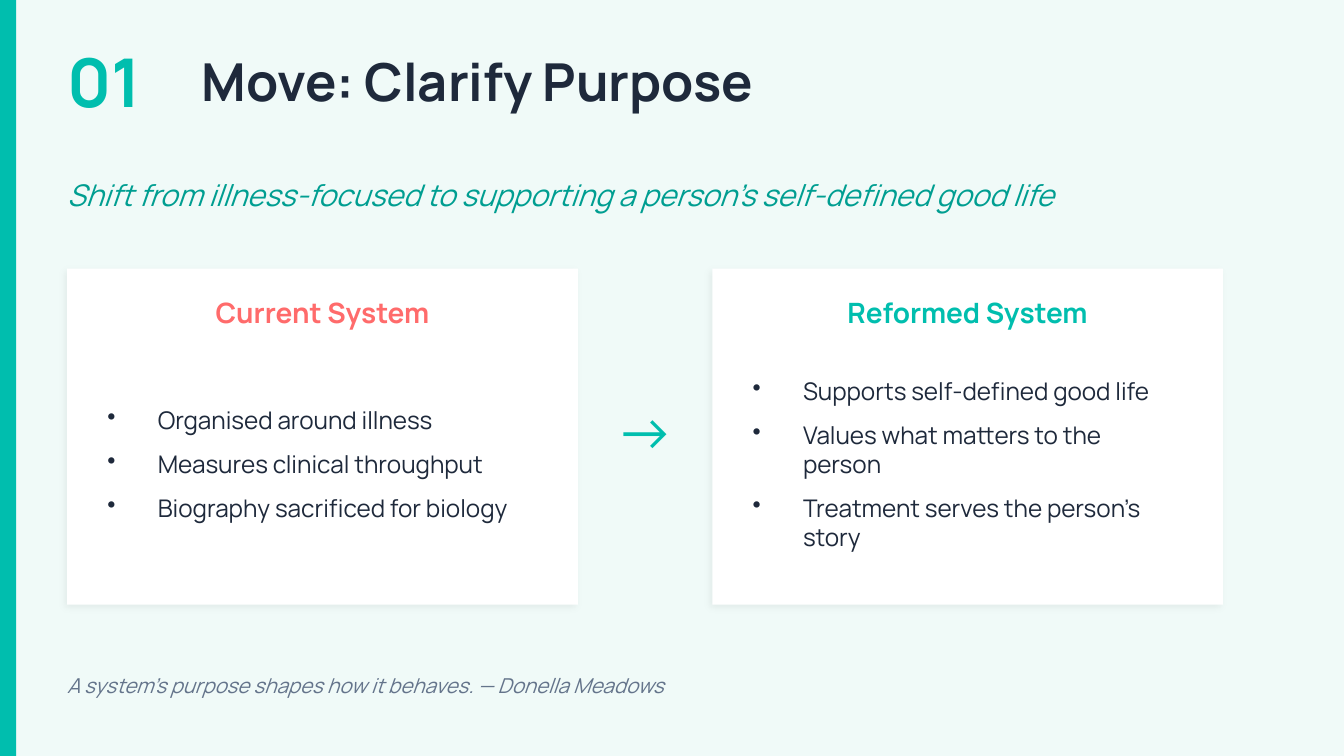
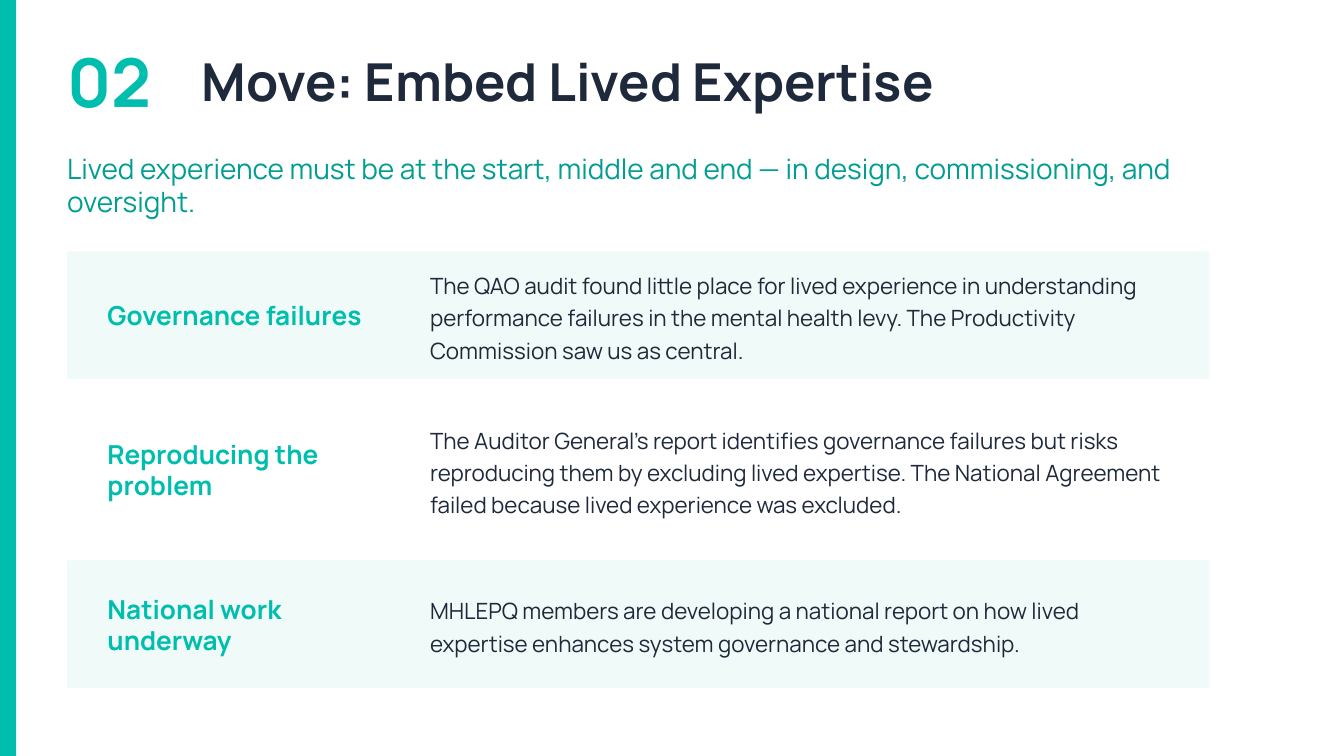
from lxml import etree
from pptx import Presentation
from pptx import util as u
from pptx.dml.color import RGBColor
from pptx.enum import shapes, text
from pptx.oxml import ns

COLORS = {
    "teal": "00BEAE", "deep_teal": "009E91", "coral": "FF6B6B",
    "ink": "1E293B", "slate": "64748B", "mint": "F0FAF8", "white": "FFFFFF",
}
FONT = "Manrope"
WIDTH = 10
HEIGHT = WIDTH * 9 / 16
LEFT = 0.5


def rgb(name):
    return RGBColor.from_string(COLORS[name])


def add_child(parent, tag, **attributes):
    return etree.SubElement(parent, ns.qn(tag), attributes)


def write_text(frame, content, size=12, color="ink", bold=False, italic=False,
               align=text.PP_ALIGN.LEFT, spacing=None, bullets=False):
    """Fill a frame with one paragraph, or with a list of them."""
    lines = [content] if isinstance(content, str) else content
    for i, line in enumerate(lines):
        paragraph = frame.paragraphs[0] if i == 0 else frame.add_paragraph()
        paragraph.alignment = align
        if spacing:
            paragraph.line_spacing = spacing
        if bullets:
            paragraph.space_after = u.Pt(8)
            properties = paragraph._p.get_or_add_pPr()
            indent = u.Pt(27)
            properties.set("marL", str(indent))
            properties.set("indent", str(-indent))
            add_child(properties, "a:buSzPct", val="100000")
            add_child(properties, "a:buChar", char="•")
        run = paragraph.add_run()
        run.text = line
        for font in (paragraph.font, run.font):
            font.name, font.size = FONT, u.Pt(size)
            font.bold, font.italic = bold, italic
            font.color.rgb = rgb(color)


class Deck:
    def __init__(self):
        self.presentation = Presentation()
        self.presentation.slide_width = u.Inches(WIDTH)
        self.presentation.slide_height = u.Inches(HEIGHT)
        self.slide = None

    def new_slide(self, number, title, background, title_width):
        self.slide = self.presentation.slides.add_slide(
            self.presentation.slide_layouts[6])
        fill = self.slide.background.fill
        fill.solid()
        fill.fore_color.rgb = rgb(background)
        self.panel(0, 0, 0.12, HEIGHT, "teal")
        self.label(LEFT, 0.3, 1, 0.6, number, size=36, color="teal", bold=True)
        self.label(1.5, 0.35, title_width, 0.5, title, size=28, bold=True)

    def label(self, left, top, width, height, content, **style):
        box = self.slide.shapes.add_textbox(*map(u.Inches, (left, top, width, height)))
        frame = box.text_frame
        frame.word_wrap = True
        frame.vertical_anchor = text.MSO_ANCHOR.MIDDLE
        frame.margin_left = frame.margin_right = 0
        frame.margin_top = frame.margin_bottom = 0
        write_text(frame, content, **style)

    def panel(self, left, top, width, height, color, shadow=False):
        panel = self.slide.shapes.add_shape(
            shapes.MSO_SHAPE.RECTANGLE, *map(u.Inches, (left, top, width, height)))
        panel.fill.solid()
        panel.fill.fore_color.rgb = rgb(color)
        panel.line.fill.background()
        panel.shadow.inherit = False
        if shadow:
            effects = panel._element.spPr.find(ns.qn("a:effectLst"))
            outer = add_child(effects, "a:outerShdw", blurRad=str(u.Pt(4)),
                              dist=str(u.Pt(2)), dir=str(135 * 60000),
                              algn="bl", rotWithShape="0")
            tint = add_child(outer, "a:srgbClr", val="000000")
            add_child(tint, "a:alpha", val="6000")

    def card(self, left, heading, color, points):
        top, width = 2, 3.8
        self.panel(left, top, width, 2.5, "white", shadow=True)
        self.label(left, top + 0.1, width, 0.45, heading, size=15, color=color,
                   bold=True, align=text.PP_ALIGN.CENTER)
        self.label(left + 0.3, top + 0.65, width - 0.6, 1.6, points,
                   size=13, bullets=True)

    def finding(self, top, heading, detail, color):
        self.panel(LEFT, top, 8.5, 0.95, color)
        self.label(0.8, top + 0.1, 2.2, 0.75, heading, size=14, color="teal", bold=True)
        self.label(3.2, top + 0.1, 5.5, 0.75, detail, spacing=1.2)


def clarify_purpose(deck):
    deck.new_slide("01", "Move: Clarify Purpose", "mint", title_width=5)
    deck.label(LEFT, 1.2, 9, 0.5,
               "Shift from illness-focused to supporting a person's self-defined good life",
               size=16, color="deep_teal", italic=True)
    # Current and reformed system, with the arrow between
    deck.card(LEFT, "Current System", "coral", [
        "Organised around illness",
        "Measures clinical throughput",
        "Biography sacrificed for biology",
    ])
    deck.label(4.4, 2.8, 0.8, 0.8, "→", size=32, color="teal",
               align=text.PP_ALIGN.CENTER)
    deck.card(5.3, "Reformed System", "teal", [
        "Supports self-defined good life",
        "Values what matters to the person",
        "Treatment serves the person's story",
    ])
    # Closing quote
    deck.label(LEFT, 4.9, 9, 0.4,
               "A system's purpose shapes how it behaves. — Donella Meadows",
               size=11, color="slate", italic=True)


def embed_expertise(deck):
    deck.new_slide("02", "Move: Embed Lived Expertise", "white", title_width=6)
    deck.label(LEFT, 1.15, 9, 0.45,
               "Lived experience must be at the start, middle and end — in design, "
               "commissioning, and oversight.", size=15, color="deep_teal")
    # Findings on alternating bands
    findings = [
        ("Governance failures",
         "The QAO audit found little place for lived experience in understanding "
         "performance failures in the mental health levy. The Productivity "
         "Commission saw us as central."),
        ("Reproducing the problem",
         "The Auditor General's report identifies governance failures but risks "
         "reproducing them by excluding lived expertise. The National Agreement "
         "failed because lived experience was excluded."),
        ("National work underway",
         "MHLEPQ members are developing a national report on how lived expertise "
         "enhances system governance and stewardship."),
    ]
    for i, (heading, detail) in enumerate(findings):
        deck.finding(1.87 + i * 1.15, heading, detail, ("mint", "white")[i % 2])


def main():
    deck = Deck()
    clarify_purpose(deck)
    embed_expertise(deck)
    deck.presentation.save("out.pptx")


if __name__ == "__main__":
    main()
